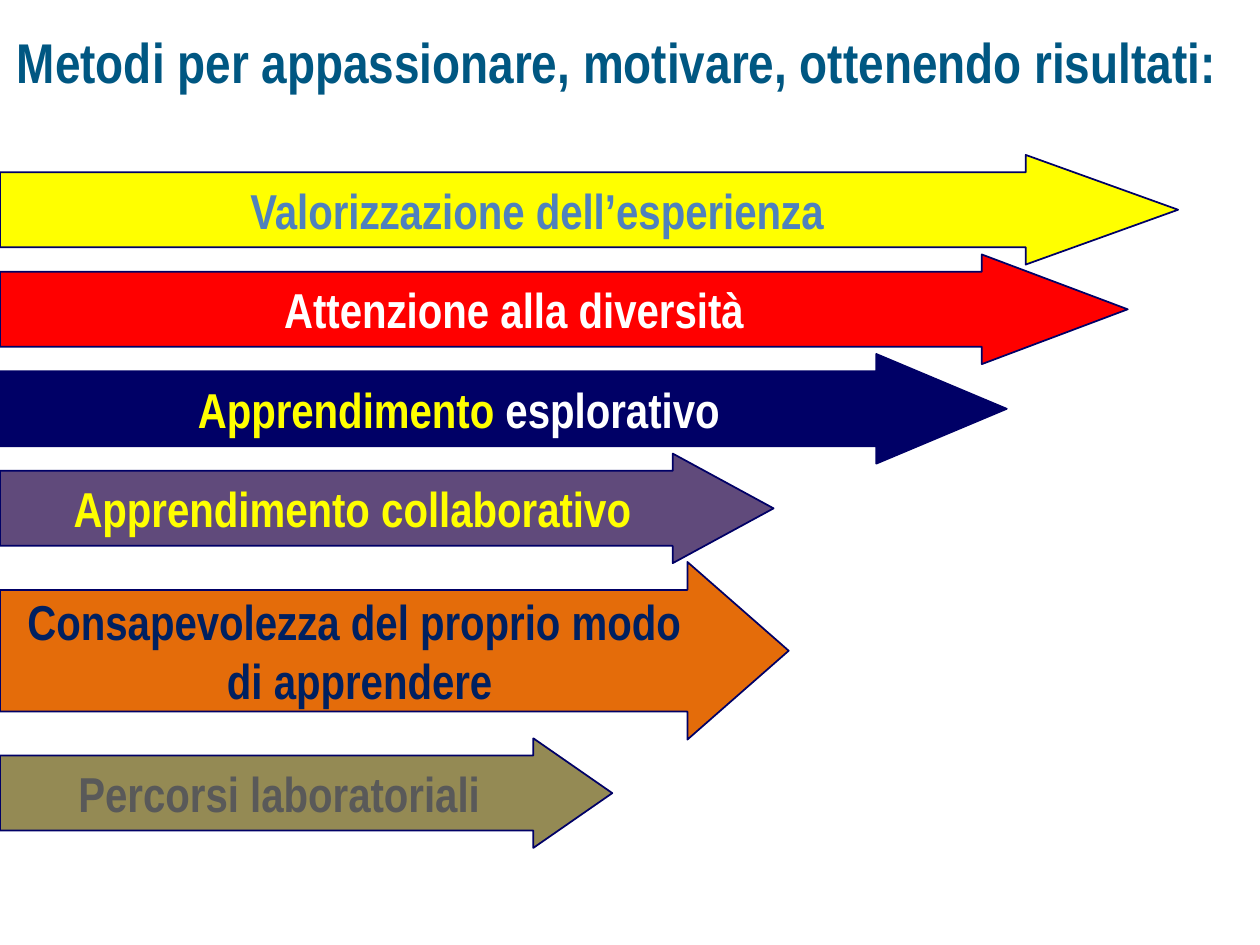
import pptx
import pptx.dml.color
import pptx.enum.shapes
import pptx.enum.text
import pptx.oxml
import pptx.util
from pptx.util import Inches

FONT = "Arial Narrow"
COLORS = {
    "teal": "005782", "shade": "EEECE1", "navy": "000066", "yellow": "FFFF00",
    "red": "FF0000", "white": "FFFFFF", "blue": "4F81BD", "purple": "604A7B",
    "orange": "E46C0A", "dark blue": "002060", "olive": "948A54", "gray": "595959",
}
TITLE = "Metodi per appassionare, motivare, ottenendo risultati:"
FIRST_TOP, PITCH, HEIGHT = 1.23, 0.79, 0.87
METHODS = [
    (FIRST_TOP, 9.35, HEIGHT, 1.39, "yellow", [[("Valorizzazione dell’esperienza", "blue")]]),
    (FIRST_TOP + PITCH, 8.95, HEIGHT, 1.33, "red", [[("Attenzione alla diversità", "white")]]),
    (FIRST_TOP + 2 * PITCH, 7.99, HEIGHT, 1.19, "navy",
     [[("Apprendimento", "yellow"), (" esplorativo", "white")]]),
    (FIRST_TOP + 3 * PITCH, 6.14, HEIGHT, 0.92, "purple",
     [[("Apprendimento collaborativo", "yellow")]]),
    (4.46, 6.26, 1.41, 0.57, "orange",
     [[("Consapevolezza del proprio modo ", "dark blue")], [("di apprendere", "dark blue")]]),
    (5.86, 4.86, HEIGHT, 0.72, "olive", [[("Percorsi laboratoriali", "gray")]]),
]


def rgb(name):
    """Return the named colour."""
    return pptx.dml.color.RGBColor.from_string(COLORS[name])


def add_run(paragraph, words, color, size):
    """Add one bold run and return it."""
    run = paragraph.add_run()
    run.text = words
    run.font.size = pptx.util.Pt(size)
    run.font.bold = True
    run.font.color.rgb = rgb(color)
    run.font.name = FONT
    return run


def add_text_shadow(run):
    """Give the run a hard shadow below and to the right."""
    shadow = pptx.oxml.parse_xml(
        '<a:effectLst xmlns:a="http://schemas.openxmlformats.org/drawingml/2006/main">'
        '<a:outerShdw dist="35921" dir="2700000" algn="ctr">'
        f'<a:srgbClr val="{COLORS["shade"]}"/></a:outerShdw></a:effectLst>')
    run.font._element.insert(1, shadow)


def add_title(slide, left, top, width, height):
    """Place the slide heading in the given box."""
    heading = slide.shapes.add_textbox(*map(Inches, (left, top, width, height))).text_frame
    heading.word_wrap = True
    heading.margin_left = heading.margin_right = Inches(0.05)
    heading.vertical_anchor = pptx.enum.text.MSO_ANCHOR.MIDDLE
    paragraph = heading.paragraphs[0]
    paragraph.alignment = pptx.enum.text.PP_ALIGN.CENTER
    add_text_shadow(add_run(paragraph, TITLE, "teal", 32))


def add_method(slide, left, top, width, height, head, fill, lines):
    """Place one labelled method arrow in the given box."""
    method = slide.shapes.add_shape(
        pptx.enum.shapes.MSO_SHAPE.RIGHT_ARROW, *map(Inches, (left, top, width, height)))
    method.adjustments[0] = 0.685
    method.adjustments[1] = head
    method.shadow.inherit = False
    method.fill.solid()
    method.fill.fore_color.rgb = rgb(fill)
    method.line.color.rgb = rgb("navy")
    method.line.width = pptx.util.Pt(1)
    label = method.text_frame
    label.word_wrap = False
    label.vertical_anchor = pptx.enum.text.MSO_ANCHOR.MIDDLE
    for index, line in enumerate(lines):
        paragraph = label.add_paragraph() if index else label.paragraphs[0]
        paragraph.alignment = pptx.enum.text.PP_ALIGN.CENTER
        for words, color in line:
            add_run(paragraph, words, color, 28)


def main():
    """Build and save the slide."""
    deck = pptx.Presentation()
    deck.slide_width, deck.slide_height = Inches(10), Inches(7.5)
    slide = deck.slides.add_slide(deck.slide_layouts[6])
    add_title(slide, 0, 0.05, 9.8, 0.87)
    for top, width, height, head, fill, lines in METHODS:
        add_method(slide, 0, top, width, height, head, fill, lines)
    deck.save("out.pptx")


if __name__ == "__main__":
    main()
